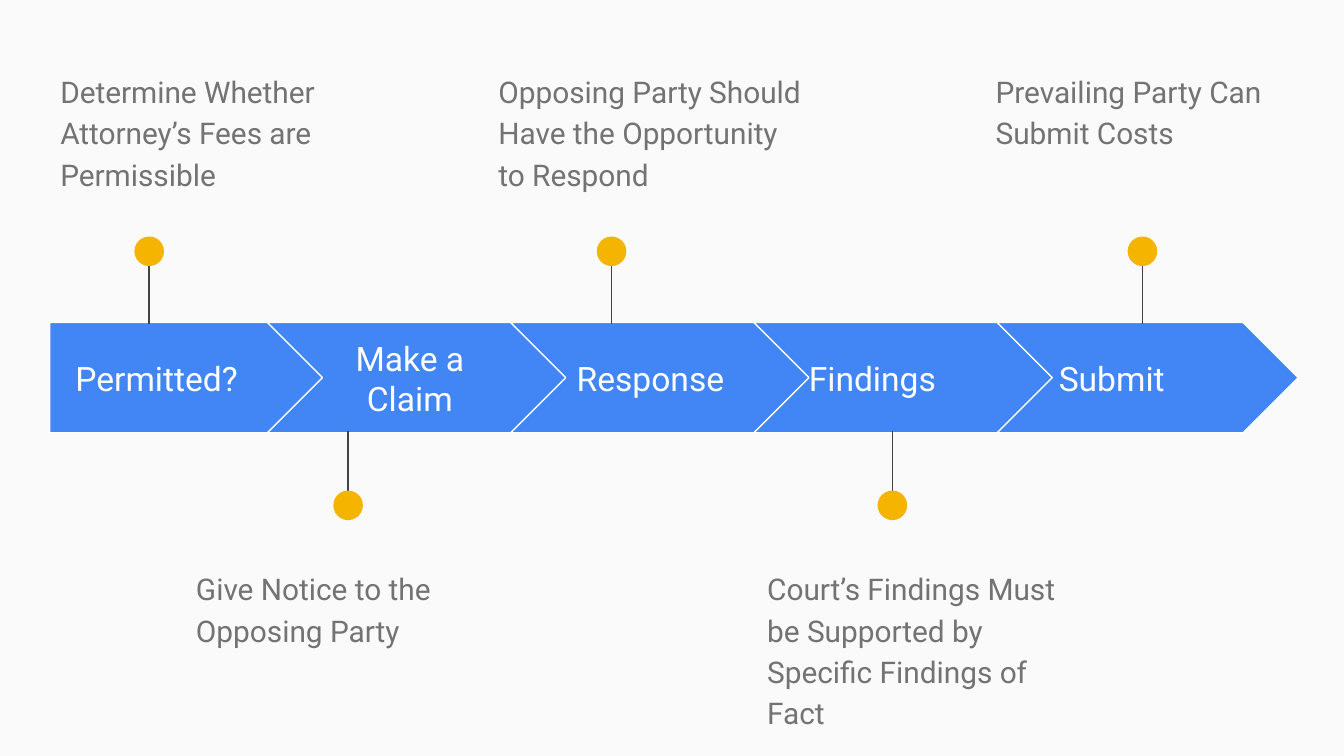
from dataclasses import dataclass

from lxml.etree import SubElement
from pptx import Presentation
from pptx.dml.color import RGBColor
from pptx.enum.shapes import MSO_CONNECTOR as Connector, MSO_SHAPE as Shape
from pptx.enum.text import MSO_ANCHOR as Anchor, PP_ALIGN as Align
from pptx.oxml.ns import qn
from pptx.slide import Slide
from pptx.util import Inches, Pt


@dataclass(frozen=True)
class Theme:
    """Fonts, type sizes and colours of the slide."""

    font: str = "Roboto"
    label_size: int = 18
    note_size: int = 16
    line_width: float = 0.75
    background: RGBColor = RGBColor.from_string("FAFAFA")
    arrow: RGBColor = RGBColor.from_string("4285F4")
    white: RGBColor = RGBColor.from_string("FFFFFF")
    pin: RGBColor = RGBColor.from_string("F4B400")
    stem: RGBColor = RGBColor.from_string("424242")
    note: RGBColor = RGBColor.from_string("737373")


@dataclass(frozen=True)
class Step:
    """One stage of the process with its label, pin and note."""

    label: str
    label_left: float
    pin_x: float
    note: str
    note_left: float
    above: bool
    label_width: float = 1.44
    label_align: Align = Align.CENTER


THEME = Theme()
ARROW_TOP, ARROW_HEIGHT, ARROW_PITCH = 2.4, 0.82, 1.81
FIRST_WIDTH, CHEVRON_WIDTH, FIRST_RIGHT = 2.05, 2.24, 2.42
PIN_SIZE = 0.22

STEPS = (
    Step("Permitted?", 0.37, 1.11, "Determine Whether Attorney’s Fees are Permissible",
         0.35, True, label_width=1.59),
    Step("Make a Claim", 2.33, 2.59, "Give Notice to the Opposing Party", 1.36, False),
    Step("Response", 4.12, 4.55, "Opposing Party Should Have the Opportunity to Respond",
         3.61, True),
    Step("Findings", 5.92, 6.64,
         "Court’s Findings Must be Supported by Specific Findings of Fact",
         5.61, False, label_align=Align.LEFT),
    Step("Submit", 7.78, 8.5, "Prevailing Party Can Submit Costs", 7.31, True,
         label_align=Align.LEFT),
)


def add_text(slide: Slide, text: str, left: float, top: float, width: float, height: float,
             size: int, color: RGBColor, align: Align, anchor: Anchor,
             line_spacing: float = 1.0, space_after: int = 0) -> None:
    """Add a wrapping text box with one formatted run."""
    box = slide.shapes.add_textbox(Inches(left), Inches(top), Inches(width), Inches(height))
    frame = box.text_frame
    frame.word_wrap = True
    frame.vertical_anchor = anchor
    frame.margin_left = frame.margin_right = Inches(0.1)
    frame.margin_top = frame.margin_bottom = Inches(0.1)
    paragraph = frame.paragraphs[0]
    paragraph.alignment = align
    paragraph.line_spacing = line_spacing
    paragraph.space_after = Pt(space_after)
    run = paragraph.add_run()
    run.text = text
    run.font.name = THEME.font
    run.font.size = Pt(size)
    run.font.color.rgb = color


def add_arrow(slide: Slide, index: int) -> None:
    """Add the arrow segment at the given position in the row."""
    kind, width = (Shape.CHEVRON, CHEVRON_WIDTH) if index else (Shape.PENTAGON, FIRST_WIDTH)
    left = FIRST_RIGHT + index * ARROW_PITCH - width
    arrow = slide.shapes.add_shape(
        kind, Inches(left), Inches(ARROW_TOP), Inches(width), Inches(ARROW_HEIGHT))
    arrow.adjustments[0] = 0.5
    arrow.shadow.inherit = False
    arrow.fill.solid()
    arrow.fill.fore_color.rgb = THEME.arrow
    arrow.line.color.rgb = THEME.white
    arrow.line.width = Pt(THEME.line_width)


def add_pin(slide: Slide, x: float, above: bool) -> None:
    """Add a grouped stem and dot above or below the arrows."""
    start, end, dot_top = (1.8, 2.41, 1.76) if above else (3.82, 3.21, 3.65)
    group = slide.shapes.add_group_shape()
    stem = group.shapes.add_connector(
        Connector.STRAIGHT, Inches(x), Inches(start), Inches(x), Inches(end))
    stem.line.color.rgb = THEME.stem
    stem.line.width = Pt(THEME.line_width)
    SubElement(stem._element.spPr, qn("a:effectLst"))
    dot = group.shapes.add_shape(
        Shape.OVAL, Inches(x - PIN_SIZE / 2), Inches(dot_top), Inches(PIN_SIZE), Inches(PIN_SIZE))
    dot.shadow.inherit = False
    dot.fill.solid()
    dot.fill.fore_color.rgb = THEME.pin
    dot.line.fill.background()


def add_step(slide: Slide, index: int, step: Step) -> None:
    """Add one complete stage of the process."""
    add_arrow(slide, index)
    add_text(slide, step.label, step.label_left, 2.56, step.label_width, 0.51,
             THEME.label_size, THEME.white, step.label_align, Anchor.MIDDLE)
    add_pin(slide, step.pin_x, step.above)
    add_text(slide, step.note, step.note_left, 0.41 if step.above else 4.11, 2.45, 0.99,
             THEME.note_size, THEME.note, Align.LEFT, Anchor.TOP,
             line_spacing=1.15, space_after=16)


def main() -> None:
    """Build and save the process slide."""
    presentation = Presentation()
    presentation.slide_width = Inches(10)
    presentation.slide_height = presentation.slide_width * 9 // 16
    slide = presentation.slides.add_slide(presentation.slide_layouts[6])
    slide.background.fill.solid()
    slide.background.fill.fore_color.rgb = THEME.background
    for index, step in enumerate(STEPS):
        add_step(slide, index, step)
    presentation.save("out.pptx")


if __name__ == "__main__":
    main()
